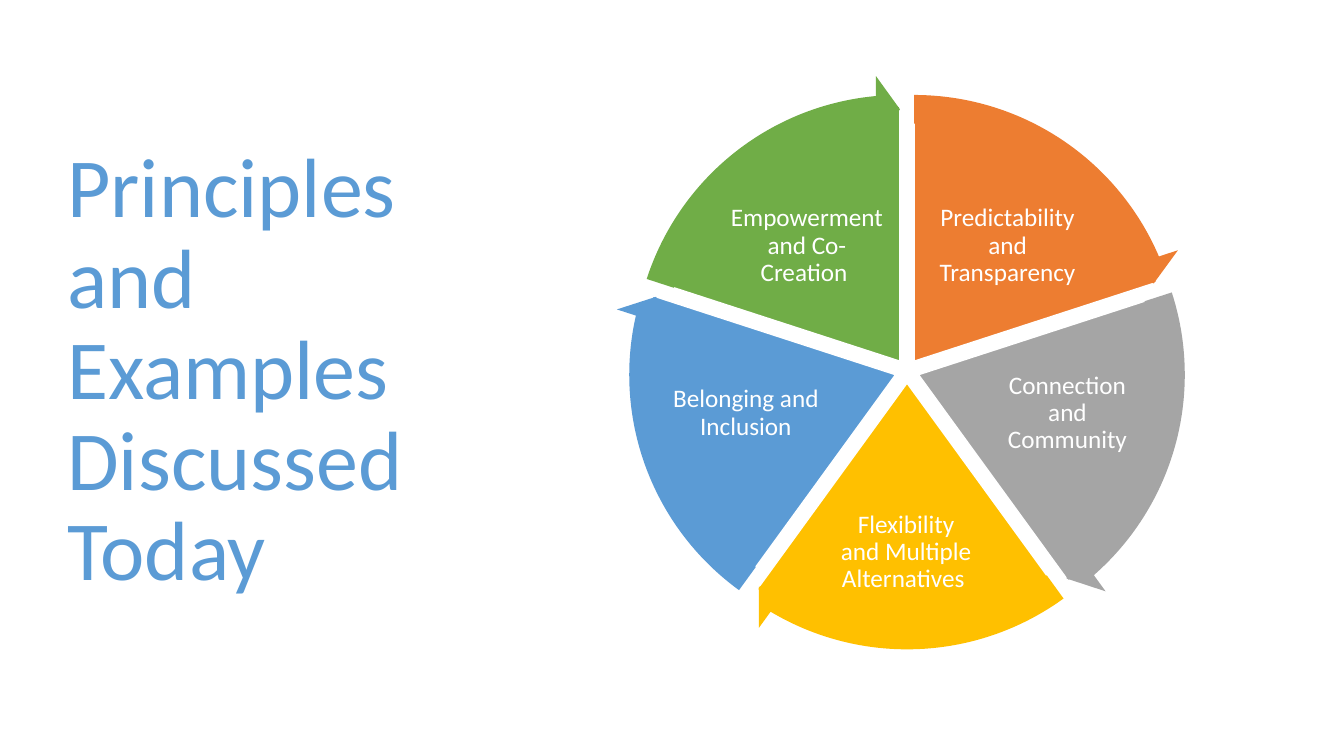
import math
from dataclasses import dataclass

from pptx import Presentation
from pptx import util as u
from pptx.dml.color import RGBColor
from pptx.enum import shapes, text


@dataclass(frozen=True)
class Theme:
    font: str = "Calibri"
    title_size: int = 60
    label_size: int = 18
    orange: str = "ED7D31"
    grey: str = "A5A5A5"
    gold: str = "FFC000"
    blue: str = "5B9BD5"
    green: str = "70AD47"
    white: str = "FFFFFF"


def write_text(frame, words, *, size, color, font, align, inset=(7.2, 3.6)):
    frame.word_wrap = True
    frame.vertical_anchor = text.MSO_ANCHOR.MIDDLE
    frame.margin_left = frame.margin_right = u.Pt(inset[0])
    frame.margin_top = frame.margin_bottom = u.Pt(inset[1])
    para = frame.paragraphs[0]
    para.alignment = align
    para.line_spacing = 0.9
    span = para.add_run()
    span.text = words
    span.font.size = u.Pt(size)
    span.font.name = font
    span.font.color.rgb = RGBColor.from_string(color)


class Painter:
    def __init__(self, page, theme):
        self.page = page
        self.theme = theme

    def label(self, words, bounds, **style):
        box = self.page.shapes.add_textbox(*map(u.Pt, bounds))
        write_text(box.text_frame, words, font=self.theme.font, **style)

    def round_shape(self, kind, center, size, fill, adjustments, outline=None):
        left, top = (middle - size / 2 for middle in center)
        shape = self.page.shapes.add_shape(
            kind, u.Pt(left), u.Pt(top), u.Pt(size), u.Pt(size))
        shape.shadow.inherit = False
        for index, value in enumerate(adjustments):
            shape.adjustments[index] = value
        shape.fill.solid()
        shape.fill.fore_color.rgb = RGBColor.from_string(fill)
        if outline:
            shape.line.color.rgb = RGBColor.from_string(outline)
            shape.line.width = u.Pt(1)
        else:
            shape.line.fill.background()

    def wedge(self, center, size, fill, start, end):
        self.round_shape(shapes.MSO_SHAPE.PIE, center, size, fill,
                         (start, end), outline=self.theme.white)

    def rim_arrow(self, center, size, fill, start, end):
        head = 3.28
        self.round_shape(shapes.MSO_SHAPE.CIRCULAR_ARROW, center, size, fill,
                         (0.05, head, end - head, start, 0.06))


def main():
    theme = Theme()
    deck = Presentation()
    deck.slide_width, deck.slide_height = u.Pt(960), u.Pt(540)
    page = deck.slides.add_slide(deck.slide_layouts[6])
    painter = Painter(page, theme)

    # Title
    painter.label("Principles and Examples Discussed Today", (41, 49, 299.5, 433.5),
                  size=theme.title_size, color=theme.blue, align=text.PP_ALIGN.LEFT)

    # Cycle: each principle has a colour and a label box
    principles = [
        ("Predictability and Transparency", theme.orange, (661, 136.8, 117.4, 77.8)),
        ("Connection and Community", theme.grey, (708.5, 252, 108, 86.4)),
        ("Flexibility and Multiple Alternatives ", theme.gold, (595.4, 347, 103.7, 95)),
        ("Belonging and Inclusion", theme.blue, (478.8, 252, 108, 86.4)),
        ("Empowerment and Co-Creation ", theme.green, (517.7, 136.8, 117.4, 77.8)),
    ]
    hub_x, hub_y, gap = 647.9, 265, 8.64
    wedge_size, arrow_size = 364.3, 409
    sweep = 360 / len(principles)
    angle_unit = 0.6  # adjustment units per degree

    # Wedges move outward from the hub along their bisectors
    arrows = []
    for index, (words, fill, bounds) in enumerate(principles):
        start = 270 + sweep * index
        bisector = math.radians(start + sweep / 2)
        center = (hub_x + gap * math.cos(bisector), hub_y + gap * math.sin(bisector))
        angles = [angle % 360 * angle_unit for angle in (start, start + sweep)]
        painter.wedge(center, wedge_size, fill, *angles)
        painter.label(words, bounds, size=theme.label_size, color=theme.white,
                      align=text.PP_ALIGN.CENTER, inset=(2, 2))
        arrows.append((center, arrow_size, fill, *angles))

    # Rim arrows lie in front of all wedges
    for arrow in arrows:
        painter.rim_arrow(*arrow)

    deck.save("out.pptx")


if __name__ == "__main__":
    main()
